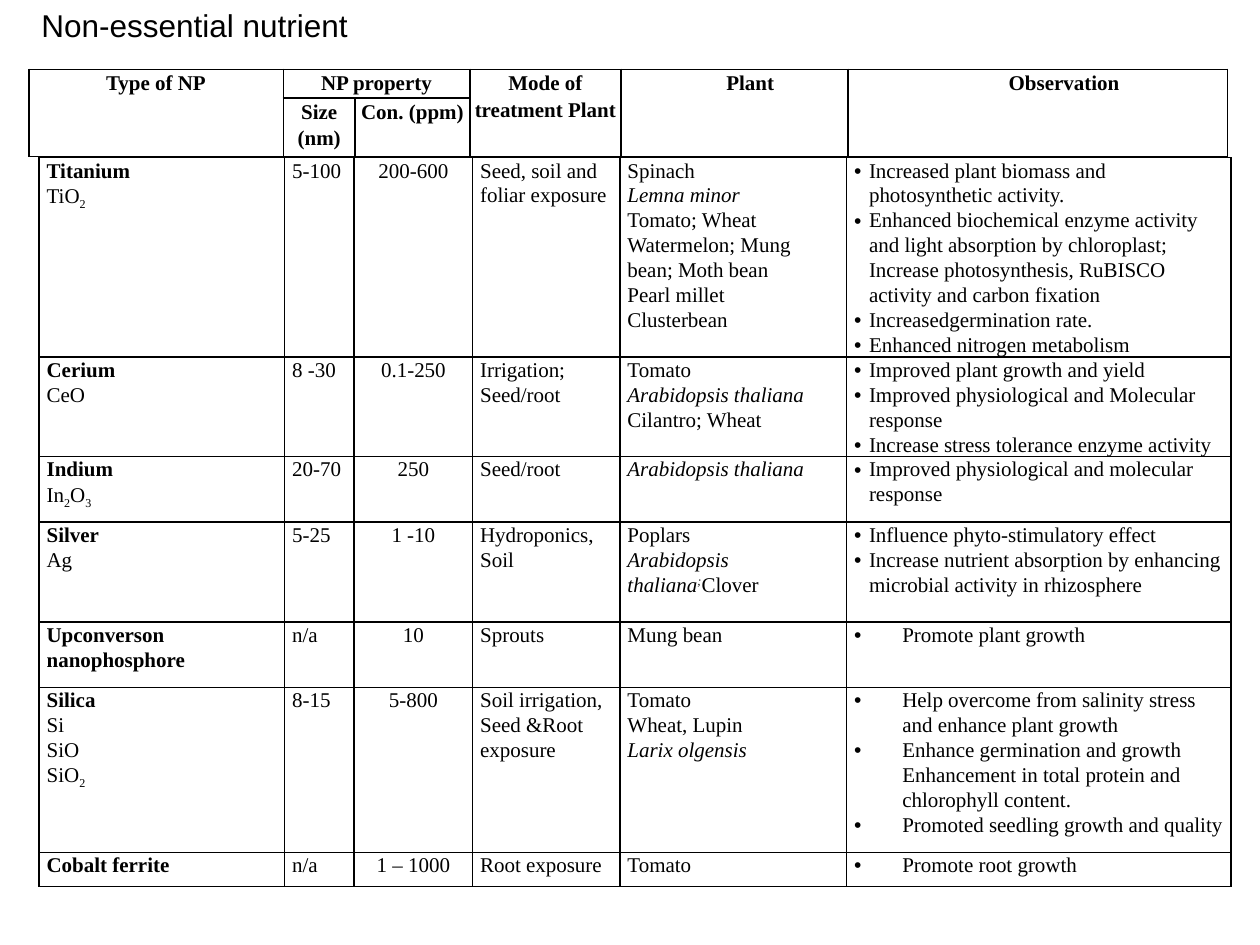
from dataclasses import dataclass

from lxml import etree
from pptx import Presentation
from pptx import util as u
from pptx.dml.color import RGBColor
from pptx.enum import text as t
from pptx.oxml import ns


@dataclass
class Theme:
    ink: str = "000000"
    paper: str = "FFFFFF"
    head: str = "Arial"
    body: str = "Times New Roman"
    big: float = 18
    small: float = 12
    rule: float = 1


theme = Theme()
MID = t.PP_ALIGN.CENTER


def write(frame, words, font=theme.body, size=theme.small, bold=False, lead=False,
          align=t.PP_ALIGN.LEFT, space=1.0, left=0, hang=0):
    """Fill a frame, one paragraph a line; | parts runs, opened by / italic,
    _ subscript or ^ italic superscript. lead makes only the first line bold."""
    frame.word_wrap = True
    for n, line in enumerate(words.split("\n")):
        para = frame.add_paragraph() if n else frame.paragraphs[0]
        para.alignment, para.line_spacing = align, space
        props = para._p.get_or_add_pPr()
        if left or hang:
            props.set("marL", str(u.Cm(left + hang)))
            props.set("indent", str(-u.Cm(hang)))
        if hang:
            etree.SubElement(props, ns.qn("a:buFont")).set("typeface", "Arial")
            etree.SubElement(props, ns.qn("a:buChar")).set("char", "•")
        for part in line.split("|"):
            mark = part[0] if part[0] in "/_^" else ""
            run = para.add_run()
            run.text = part[len(mark):]
            run.font.name, run.font.size = font, u.Pt(size)
            run.font.bold = bold or (lead and n == 0)
            run.font.italic = mark in ("/", "^")
            run.font.color.rgb = RGBColor.from_string(theme.ink)
            if mark in ("_", "^"):
                run.font._element.set("baseline", "-25000" if mark == "_" else "30000")


def grid(slide, x, y, cols, rows, pad):
    """Add a ruled table with white cells; all lengths in cm."""
    frame = slide.shapes.add_table(len(rows), len(cols), u.Cm(x), u.Cm(y),
                                   u.Cm(sum(cols)), u.Cm(sum(rows)))
    table = frame.table
    table.first_row = table.horz_banding = False
    for col, wide in zip(table.columns, cols):
        col.width = u.Cm(wide)
    for row, high in zip(table.rows, rows):
        row.height = u.Cm(high)
    for cell in table.iter_cells():
        cell.margin_left = cell.margin_right = u.Cm(pad)
        cell.margin_top = cell.margin_bottom = 0
        cell.fill.solid()
        cell.fill.fore_color.rgb = RGBColor.from_string(theme.paper)
        props = cell._tc.get_or_add_tcPr()
        for n, side in enumerate(("lnL", "lnR", "lnT", "lnB")):
            line = etree.Element(ns.qn("a:" + side), w=str(u.Pt(theme.rule)))
            fill = etree.SubElement(line, ns.qn("a:solidFill"))
            etree.SubElement(fill, ns.qn("a:srgbClr")).set("val", theme.ink)
            props.insert(n, line)
    return table


deck = Presentation()
deck.slide_width, deck.slide_height = u.Cm(25.4), u.Cm(19.05)
slide = deck.slides.add_slide(deck.slide_layouts[5])

title = slide.shapes.title
title.left, title.top, title.width, title.height = u.Cm(0.58), u.Cm(0), u.Cm(12.5), u.Cm(1.8)
title.text_frame.auto_size = t.MSO_AUTO_SIZE.NONE
title.text_frame.vertical_anchor = t.MSO_ANCHOR.TOP
write(title.text_frame, "Non-essential nutrient", font=theme.head, size=theme.big)

# Column heads: row, column, rows and columns spanned, words, left indent
heads = [
    (0, 0, 2, 1, "Type of NP", 0),
    (0, 1, 1, 2, "NP property", 0),
    (0, 3, 2, 1, "Mode of treatment Plant", 0),
    (0, 4, 2, 1, "Plant", 0.64),
    (0, 5, 2, 1, "Observation", 1.07),
    (1, 1, 1, 1, "Size (nm)", 0),
    (1, 2, 1, 1, "Con. (ppm)", 0),
]
top = grid(slide, 0.58, 1.4, [5.13, 1.45, 2.31, 3.05, 4.57, 7.65], [0.58, 1.17], 0.08)
for row, col, down, over, words, left in heads:
    cell = top.cell(row, col)
    if down * over > 1:
        cell.merge(top.cell(row + down - 1, col + over - 1))
    write(cell.text_frame, words, bold=True, align=MID, space=1.12, left=left)

# Row height, bullet indent, then the six cells
near, far = 0.3, 0.97
rows = [
    (3.76, near, "Titanium\nTiO|_2", "5-100", "200-600", "Seed, soil and foliar exposure",
     "Spinach\n/Lemna minor\nTomato; Wheat\nWatermelon; Mung bean; Moth bean\n"
     "Pearl millet\nClusterbean",
     "Increased plant biomass and photosynthetic activity.\n"
     "Enhanced biochemical enzyme activity and light absorption by chloroplast; "
     "Increase photosynthesis, RuBISCO activity and carbon fixation\n"
     "Increasedgermination rate.\nEnhanced nitrogen metabolism"),
    (2.01, near, "Cerium\nCeO", "8 -30", "0.1-250", "Irrigation; Seed/root",
     "Tomato\n/Arabidopsis thaliana\nCilantro; Wheat",
     "Improved plant growth and yield\nImproved physiological and Molecular response\n"
     "Increase stress tolerance enzyme activity"),
    (1.32, near, "Indium\nIn|_2|O|_3", "20-70", "250", "Seed/root",
     "/Arabidopsis thaliana", "Improved physiological and molecular response"),
    (2.01, near, "Silver\nAg", "5-25", "1 -10", "Hydroponics, Soil",
     "Poplars\n/Arabidopsis thaliana|^;|Clover",
     "Influence phyto-stimulatory effect\n"
     "Increase nutrient absorption by enhancing microbial activity in rhizosphere"),
    (1.32, far, "Upconverson nanophosphore", "n/a", "10", "Sprouts",
     "Mung bean", "Promote plant growth"),
    (3.33, far, "Silica\nSi\nSiO\nSiO|_2", "8-15", "5-800",
     "Soil irrigation, Seed &Root exposure", "Tomato\nWheat, Lupin\n/Larix olgensis",
     "Help overcome from salinity stress and enhance plant growth\n"
     "Enhance germination and growth Enhancement in total protein and chlorophyll content.\n"
     "Promoted seedling growth and quality"),
    (0.69, far, "Cobalt ferrite", "n/a", "1 – 1000", "Root exposure",
     "Tomato", "Promote root growth"),
]
main = grid(slide, 0.79, 3.18, [4.95, 1.4, 2.39, 2.97, 4.57, 7.75],
            [row[0] for row in rows], 0.15)
for r, (high, hang, *cells) in enumerate(rows):
    for c, words in enumerate(cells):
        write(main.cell(r, c).text_frame, words, lead=c == 0, space=1.07,
              align=MID if c == 2 else t.PP_ALIGN.LEFT, hang=hang if c == 5 else 0)

deck.save("out.pptx")
